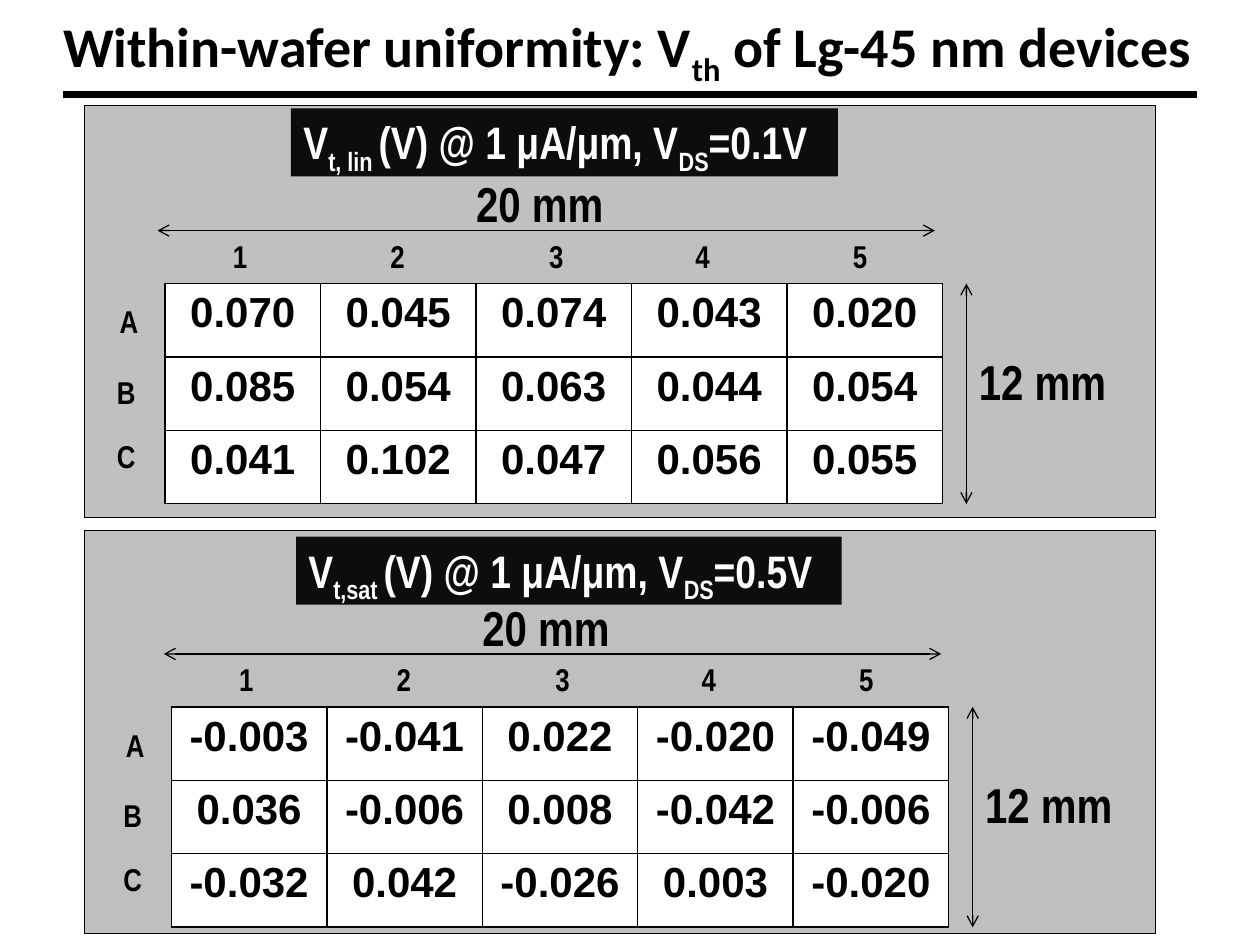
from dataclasses import dataclass

from lxml.etree import SubElement
from pptx import Presentation
from pptx.dml.color import RGBColor
from pptx.enum.shapes import MSO_CONNECTOR, MSO_SHAPE
from pptx.enum.text import MSO_ANCHOR, MSO_AUTO_SIZE, PP_ALIGN
from pptx.oxml.ns import qn
from pptx.util import Inches, Pt


@dataclass(frozen=True)
class Theme:
    black: RGBColor = RGBColor(0, 0, 0)
    white: RGBColor = RGBColor(255, 255, 255)
    banner: RGBColor = RGBColor(0x0D, 0x0D, 0x0D)
    heading_font: str = "Calibri"
    label_font: str = "Arial Narrow"
    value_font: str = "Arial"
    heading_size: int = 32
    banner_size: int = 26
    dimension_size: int = 28
    value_size: int = 24
    label_size: int = 18


THEME = Theme()
CELL_WIDTH, ROW_HEIGHT = 1.234, 0.583
DIE_COLUMNS, DIE_ROWS = 5, 3

# Label places are offsets from the top left corner of the table.
AXIS_LABELS = [
    ("A", -0.46, 0.1), ("B", -0.48, 0.66), ("C", -0.48, 1.17),
    ("1", 0.44, -0.42), ("2", 1.69, -0.42), ("3", 2.95, -0.42),
    ("4", 4.11, -0.42), ("5", 5.36, -0.42),
]
DIMENSIONS = [("20 mm", 2.37, -0.92), ("12 mm", 6.36, 0.49)]

PANELS = [
    {
        "frame": (0.67, 0.84, 8.5, 3.27), "fill": RGBColor(0xC0, 0xC0, 0xC0), "border": 0.5,
        "banner": (2.31, 0.86, 4.34, 0.54), "origin": (1.31, 2.25),
        "parameter": "t, lin ", "voltage": "=0.1V",
        "values": [
            ["0.070", "0.045", "0.074", "0.043", "0.020"],
            ["0.085", "0.054", "0.063", "0.044", "0.054"],
            ["0.041", "0.102", "0.047", "0.056", "0.055"],
        ],
    },
    {
        "frame": (0.67, 4.21, 8.5, 3.2), "fill": RGBColor(0xBF, 0xBF, 0xBF), "border": 0.75,
        "banner": (2.35, 4.26, 4.33, 0.54), "origin": (1.36, 5.61),
        "parameter": "t,sat ", "voltage": "=0.5V",
        "values": [
            ["-0.003", "-0.041", "0.022", "-0.020", "-0.049"],
            ["0.036", "-0.006", "0.008", "-0.042", "-0.006"],
            ["-0.032", "0.042", "-0.026", "0.003", "-0.020"],
        ],
    },
]


def inches(values):
    return [Inches(value) for value in values]


def write_text(frame, pieces, font, size, color=THEME.black, align=PP_ALIGN.LEFT):
    """Write the pieces as one paragraph; every second piece is a subscript."""
    para = frame.paragraphs[0]
    para.alignment = align
    for index, piece in enumerate(pieces):
        span = para.add_run()
        span.text = piece
        for name, value in {"name": font, "size": Pt(size), "bold": True}.items():
            setattr(span.font, name, value)
        span.font.color.rgb = color
        if index % 2:
            span._r.get_or_add_rPr().set("baseline", "-25000")
    return para


def fit_frame(frame):
    settings = {
        "word_wrap": False,
        "auto_size": MSO_AUTO_SIZE.SHAPE_TO_FIT_TEXT,
        "vertical_anchor": MSO_ANCHOR.TOP,
    }
    for name, value in settings.items():
        setattr(frame, name, value)


def add_label(slide, text, place, size):
    box = slide.shapes.add_textbox(*inches(place))
    fit_frame(box.text_frame)
    write_text(box.text_frame, [text], THEME.label_font, size)


def add_rectangle(slide, place, fill, border=None):
    box = slide.shapes.add_shape(MSO_SHAPE.RECTANGLE, *inches(place))
    box.shadow.inherit = False
    box.fill.solid()
    box.fill.fore_color.rgb = fill
    if border:
        box.line.color.rgb = THEME.black
        box.line.width = Pt(border)
    else:
        box.line.fill.background()
    return box


def add_line(slide, start, end, width, arrows=False):
    line = slide.shapes.add_connector(MSO_CONNECTOR.STRAIGHT, *inches(start + end))
    line.line.color.rgb = THEME.black
    line.line.width = Pt(width)
    properties = line._element.spPr
    if arrows:
        for end_tag in ("a:headEnd", "a:tailEnd"):
            SubElement(properties.find(qn("a:ln")), qn(end_tag), type="arrow")
    SubElement(properties, qn("a:effectLst"))


def format_cell(cell):
    properties = cell._tc.get_or_add_tcPr()
    for side in ("a:lnL", "a:lnR", "a:lnT", "a:lnB"):
        border = SubElement(properties, qn(side), w=str(Pt(1)))
        fill = SubElement(border, qn("a:solidFill"))
        SubElement(fill, qn("a:srgbClr"), val=str(THEME.black))
    cell.fill.solid()
    cell.fill.fore_color.rgb = THEME.white


def add_die_table(slide, origin, values):
    size = (CELL_WIDTH * DIE_COLUMNS, ROW_HEIGHT * DIE_ROWS)
    table = slide.shapes.add_table(DIE_ROWS, DIE_COLUMNS, *inches(origin + size)).table
    table.first_row = table.horz_banding = False
    for row, row_values in enumerate(values):
        for column, value in enumerate(row_values):
            cell = table.cell(row, column)
            format_cell(cell)
            write_text(cell.text_frame, [value], THEME.value_font,
                       THEME.value_size, align=PP_ALIGN.CENTER)


def add_panel(slide, panel):
    left, top = panel["origin"]
    add_rectangle(slide, panel["frame"], panel["fill"], panel["border"])
    add_die_table(slide, panel["origin"], panel["values"])

    banner = add_rectangle(slide, panel["banner"], THEME.banner)
    fit_frame(banner.text_frame)
    pieces = ["V", panel["parameter"], "(V) @ 1 μA/μm, V", "DS", panel["voltage"]]
    write_text(banner.text_frame, pieces, THEME.label_font, THEME.banner_size, THEME.white)

    add_line(slide, (left - 0.06, top - 0.42), (left + 6.11, top - 0.42), 0.75, arrows=True)
    add_line(slide, (left + 6.36, top), (left + 6.36, top + 1.75), 0.75, arrows=True)
    for text, across, down in DIMENSIONS:
        add_label(slide, text, (left + across, top + down, 1.22, 0.57), THEME.dimension_size)
    for text, across, down in AXIS_LABELS:
        width = 0.35 if text.isalpha() else 0.32
        add_label(slide, text, (left + across, top + down, width, 0.4), THEME.label_size)


def add_heading(slide):
    title = slide.shapes.title
    title.left, title.top, title.width, title.height = inches((0.5, 0.16, 9.16, 0.44))
    frame = title.text_frame
    settings = {
        "margin_left": 0, "margin_right": 0, "margin_top": 0, "margin_bottom": 0,
        "vertical_anchor": MSO_ANCHOR.MIDDLE,
        "auto_size": MSO_AUTO_SIZE.NONE,
        "word_wrap": True,
    }
    for name, value in settings.items():
        setattr(frame, name, value)
    pieces = ["Within-wafer uniformity: V", "th", " of Lg-45 nm devices"]
    para = write_text(frame, pieces, THEME.heading_font, THEME.heading_size)
    para.line_spacing = 0.87


def main():
    deck = Presentation()
    deck.slide_width, deck.slide_height = Inches(10), Inches(7.5)
    slide = deck.slides.add_slide(deck.slide_layouts[5])
    add_heading(slide)
    add_line(slide, (0.5, 0.75), (9.5, 0.75), 4.5)
    for panel in PANELS:
        add_panel(slide, panel)
    deck.save("out.pptx")


if __name__ == "__main__":
    main()
